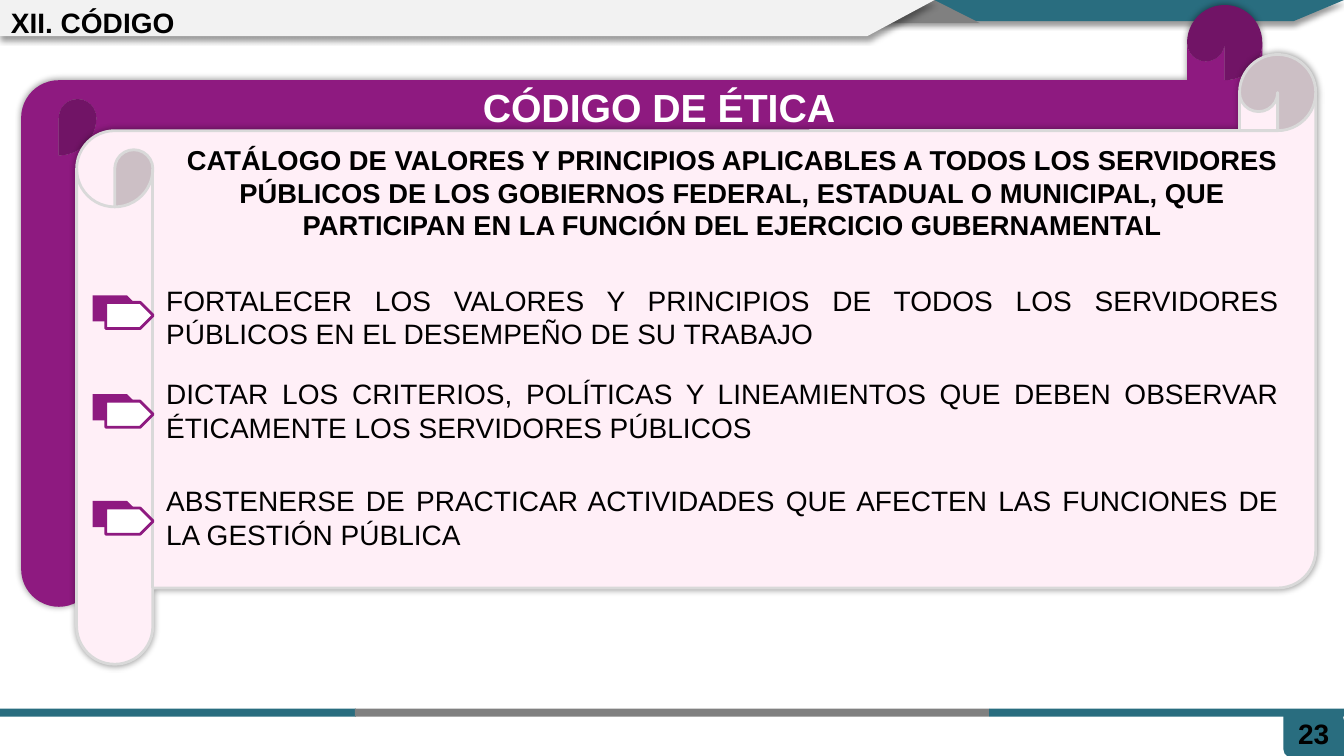
from lxml.etree import SubElement
from pptx import Presentation
from pptx.dml.color import RGBColor
from pptx.enum.shapes import MSO_SHAPE as Shape
from pptx.enum.text import MSO_ANCHOR as Anchor, MSO_AUTO_SIZE as AutoSize, PP_ALIGN as Align
from pptx.oxml.ns import qn
from pptx.util import Emu, Pt

PX = 9144  # one hundred px to the inch
TEAL, GRAY, SILVER, LIGHT = "296D7F", "808080", "D9D9D9", "F2F2F2"
PURPLE, PINK, WHITE, BLACK = "8E1A80", "FFEFF7", "FFFFFF", "000000"
HEADER_SHADOW = {"blur": 4, "distance": 3, "angle": 90}
SCROLL_SHADOW = {"blur": 5, "distance": 0, "angle": 0}


def color(value):
    return RGBColor.from_string(value)


def px(*values):
    return [Emu(value * PX) for value in values]


class SlideBuilder:
    font = {"name": "Arial", "size": Pt(20), "bold": False}

    def __init__(self, deck):
        self.page = deck.slides.add_slide(deck.slide_layouts[6])

    def paint(self, item, fill, line=None, shadow=None):
        item.fill.solid()
        item.fill.fore_color.rgb = color(fill)
        if line:
            item.line.color.rgb = color(line)
            item.line.width = Pt(2)
        else:
            item.line.fill.background()
        item.shadow.inherit = False
        if shadow:
            effects = item._element.spPr.find(qn("a:effectLst"))
            outer = SubElement(effects, qn("a:outerShdw"), {
                "blurRad": str(Pt(shadow["blur"])),
                "dist": str(Pt(shadow["distance"])),
                "dir": str(shadow["angle"] * 60000),
                "algn": "ctr", "rotWithShape": "0"})
            tint = SubElement(outer, qn("a:srgbClr"), val=BLACK)
            SubElement(tint, qn("a:alpha"), val="40000")

    def shape(self, kind, area, fill, adjustments=(), **style):
        item = self.page.shapes.add_shape(kind, *px(*area))
        for index, value in enumerate(adjustments):
            item.adjustments[index] = value
        self.paint(item, fill, **style)

    def polygon(self, points, fill, **style):
        builder = self.page.shapes.build_freeform(*points[0], scale=PX)
        builder.add_line_segments(points[1:], close=True)
        self.paint(builder.convert_to_shape(), fill, **style)

    def text(self, words, area, align=Align.LEFT, anchor=Anchor.TOP,
             wrap=True, ink=BLACK, **changes):
        box = self.page.shapes.add_textbox(*px(*area))
        frame = {"word_wrap": wrap, "vertical_anchor": anchor,
                 "auto_size": AutoSize.SHAPE_TO_FIT_TEXT}
        for name, value in frame.items():
            setattr(box.text_frame, name, value)
        para = box.text_frame.paragraphs[0]
        para.alignment = align
        span = para.add_run()
        span.text = words
        for name, value in {**self.font, **changes}.items():
            setattr(span.font, name, value)
        span.font.color.rgb = color(ink)


def main():
    deck = Presentation()
    deck.slide_width, deck.slide_height = px(1333, 750)
    slide = SlideBuilder(deck)

    # Header bands
    slide.polygon([(630, 0), (1333, 0), (1283, 21), (630, 21)], TEAL,
                  shadow=HEADER_SHADOW)
    slide.shape(Shape.ISOSCELES_TRIANGLE, (881, 0, 91, 23), GRAY)
    slide.polygon([(0, 0), (927, 0), (860, 36), (0, 36)], LIGHT,
                  shadow=HEADER_SHADOW)

    # Footer bar and page number
    slide.shape(Shape.ROUND_2_DIAG_RECTANGLE, (1273, 707, 60, 44), TEAL,
                adjustments=(0, 0.17))
    for left, width, fill in [(0, 353, TEAL), (352, 629, GRAY), (981, 353, TEAL)]:
        slide.shape(Shape.RECTANGLE, (left, 703, width, 8), fill)
    slide.text("23", (1273, 706, 60, 44), align=Align.CENTER, bold=True)

    # Section title
    slide.text("XII. CÓDIGO", (1, 0, 1013, 44), anchor=Anchor.MIDDLE, bold=True)

    # Scrolls with heading and definition
    slide.shape(Shape.HORIZONTAL_SCROLL, (21, 5, 1231, 597), PURPLE,
                shadow=SCROLL_SHADOW)
    slide.shape(Shape.HORIZONTAL_SCROLL, (76, 54, 1229, 605), PINK,
                line=SILVER, shadow=SCROLL_SHADOW)
    slide.text("CATÁLOGO DE VALORES Y PRINCIPIOS APLICABLES A TODOS LOS SERVIDORES "
               "PÚBLICOS DE LOS GOBIERNOS FEDERAL, ESTADUAL O MUNICIPAL, QUE "
               "PARTICIPAN EN LA FUNCIÓN DEL EJERCICIO GUBERNAMENTAL",
               (165, 137, 1123, 109), align=Align.CENTER, bold=True, size=Pt(19.5))
    slide.text("CÓDIGO DE ÉTICA", (469, 78, 373, 57), wrap=False, ink=WHITE,
               bold=True, size=Pt(28))

    # Objectives, each with a double arrow marker
    objectives = [
        (276, 293, "FORTALECER LOS VALORES Y PRINCIPIOS DE TODOS LOS SERVIDORES "
                   "PÚBLICOS EN EL DESEMPEÑO DE SU TRABAJO"),
        (369, 391, "DICTAR LOS CRITERIOS, POLÍTICAS Y LINEAMIENTOS QUE DEBEN OBSERVAR "
                   "ÉTICAMENTE LOS SERVIDORES PÚBLICOS"),
        (475, 497, "ABSTENERSE DE PRACTICAR ACTIVIDADES QUE AFECTEN LAS FUNCIONES DE "
                   "LA GESTIÓN PÚBLICA"),
    ]
    for text_top, marker_top, words in objectives:
        slide.text(words, (155, text_top, 1123, 77), align=Align.JUSTIFY)
        slide.shape(Shape.PENTAGON, (92, marker_top, 47, 26), PURPLE)
        slide.shape(Shape.PENTAGON, (105, marker_top + 7, 47, 26), WHITE, line=PURPLE)

    deck.save("out.pptx")


if __name__ == "__main__":
    main()
